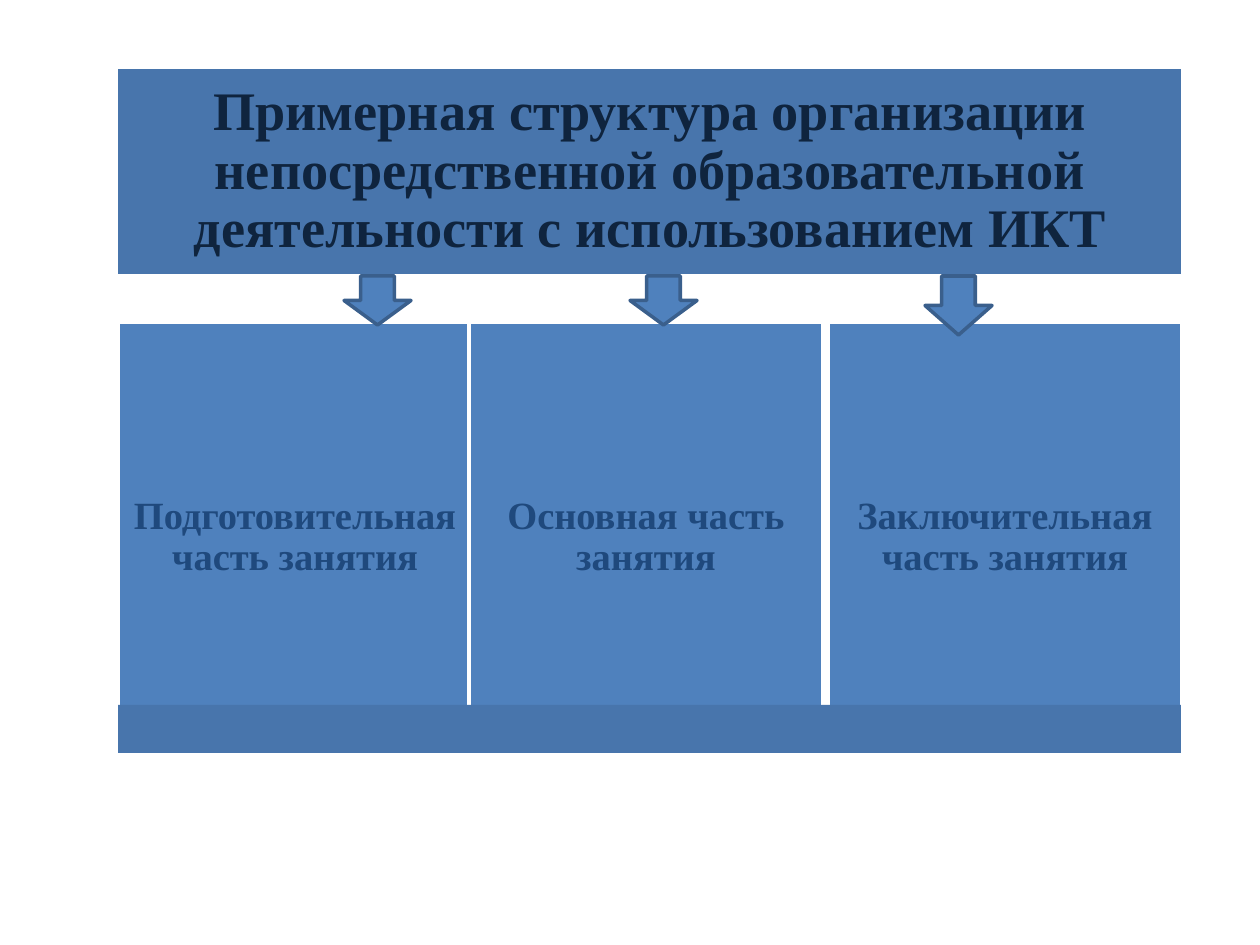
from dataclasses import dataclass

from pptx import Presentation, util as u
from pptx.dml.color import RGBColor
from pptx.enum import shapes, text


@dataclass(frozen=True)
class Theme:
    font: str = "Times New Roman"
    band: str = "4875AC"
    block: str = "4F81BD"
    gap: str = "FFFFFF"
    arrow_edge: str = "3A5F8C"
    title_ink: str = "0F243E"
    stage_ink: str = "1F497D"
    title_size: int = 31
    stage_size: int = 22
    edge: int = 2


class SlideBuilder:
    PX_PER_INCH = 126

    def __init__(self, slide, theme):
        self.slide = slide
        self.theme = theme

    def px(self, length):
        return u.Emu(round(length * 914400 / self.PX_PER_INCH))

    def shape(self, kind, box, fill, edge=None):
        item = self.slide.shapes.add_shape(kind, *map(self.px, box))
        item.shadow.inherit = False
        item.fill.solid()
        item.fill.fore_color.rgb = RGBColor.from_string(fill)
        if edge:
            item.line.color.rgb = RGBColor.from_string(edge)
            item.line.width = u.Pt(self.theme.edge)
        else:
            item.line.fill.background()
        return item

    def band(self, box):
        return self.shape(shapes.MSO_SHAPE.RECTANGLE, box, self.theme.band)

    def label(self, item, wording, size, ink, inset):
        frame = item.text_frame
        frame.word_wrap = True
        frame.vertical_anchor = text.MSO_ANCHOR.MIDDLE
        frame.margin_left = frame.margin_right = self.px(inset)
        frame.margin_top = frame.margin_bottom = self.px(inset)
        paragraph = frame.paragraphs[0]
        paragraph.alignment = text.PP_ALIGN.CENTER
        paragraph.line_spacing = 0.9
        run = paragraph.add_run()
        run.text = wording
        run.font.name = self.theme.font
        run.font.size = u.Pt(size)
        run.font.bold = True
        run.font.color.rgb = RGBColor.from_string(ink)

    def title(self, box, wording):
        self.label(self.band(box), wording, self.theme.title_size, self.theme.title_ink, 16)

    def stage(self, box, wording):
        block = self.shape(shapes.MSO_SHAPE.RECTANGLE, box, self.theme.block, self.theme.gap)
        self.label(block, wording, self.theme.stage_size, self.theme.stage_ink, 11)

    def arrow(self, box):
        self.shape(shapes.MSO_SHAPE.DOWN_ARROW, box, self.theme.block, self.theme.arrow_edge)


def main():
    deck = Presentation()
    deck.slide_width, deck.slide_height = u.Inches(10), u.Inches(7.5)
    builder = SlideBuilder(deck.slides.add_slide(deck.slide_layouts[6]), Theme())

    left, width = 118, 1063
    builder.title(
        (left, 69, width, 205),
        "Примерная структура организации непосредственной образовательной "
        "деятельности с использованием ИКТ",
    )

    lesson_stages = [
        (left, "Подготовительная часть занятия"),
        (469, "Основная часть занятия"),
        (828, "Заключительная часть занятия"),
    ]
    for stage_left, wording in lesson_stages:
        builder.stage((stage_left, 322, 354, 431), wording)

    builder.band((left, 705, width, 48))

    for arrow_left, arrow_height in [(344, 49), (630, 49), (925, 59)]:
        builder.arrow((arrow_left, 276, 67, arrow_height))

    deck.save("out.pptx")


if __name__ == "__main__":
    main()
